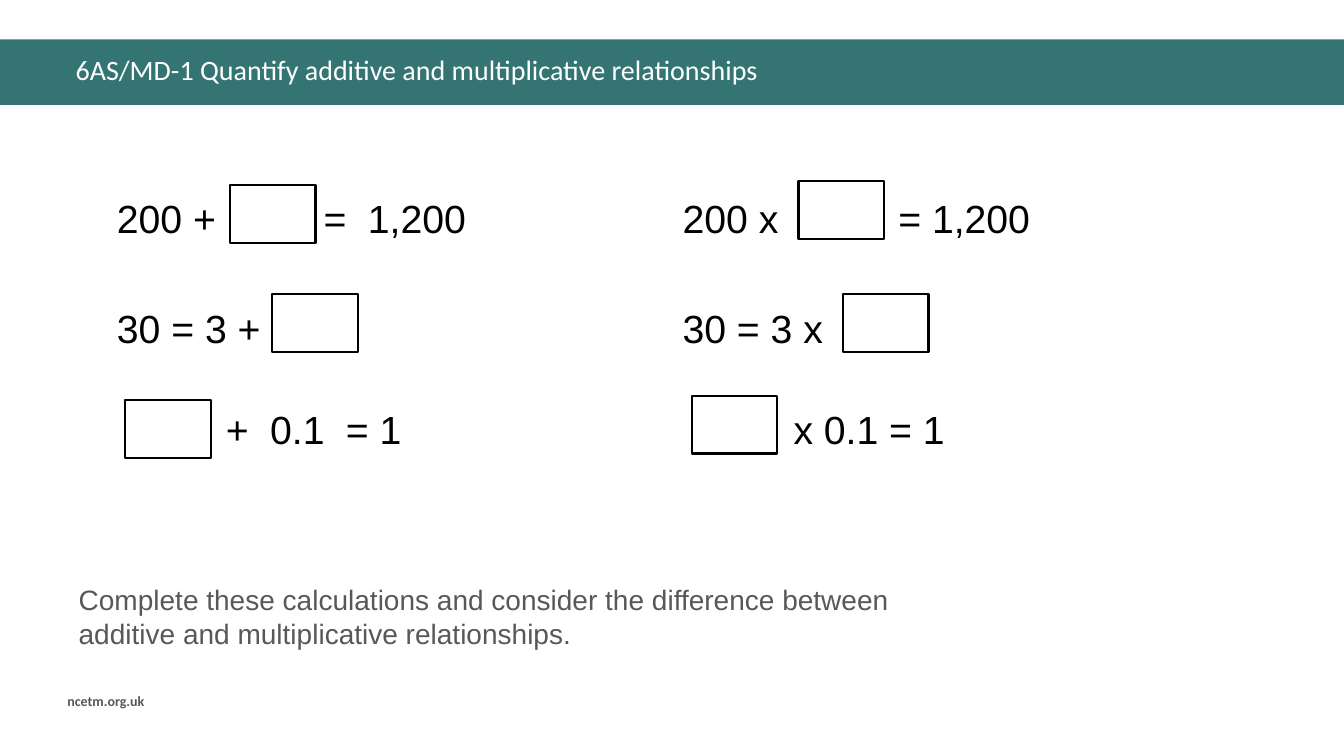
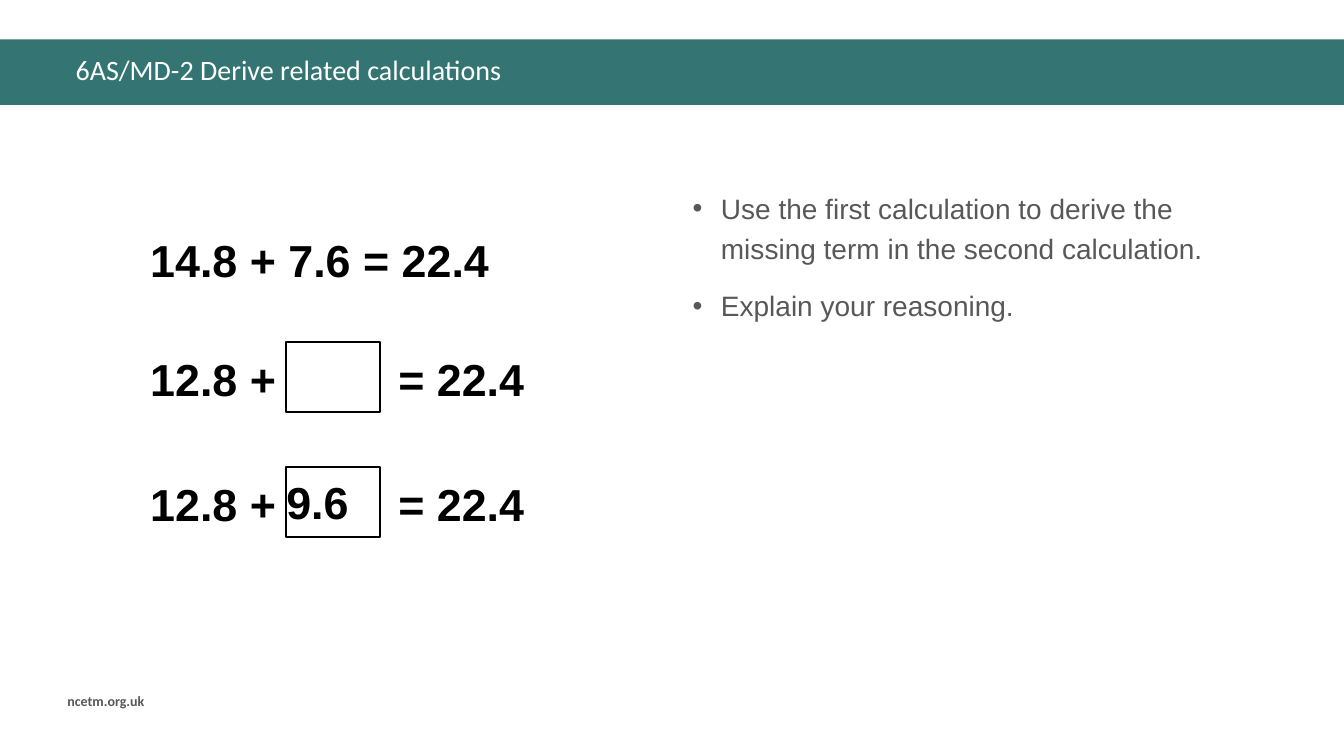
from dataclasses import dataclass

from lxml.etree import SubElement
from pptx import Presentation
from pptx.dml.color import RGBColor
from pptx.enum.shapes import MSO_SHAPE
from pptx.enum.text import MSO_ANCHOR, MSO_AUTO_SIZE, PP_ALIGN
from pptx.oxml.ns import qn
from pptx.presentation import Presentation as Deck
from pptx.slide import Slide, SlideLayout
from pptx.text.text import TextFrame
from pptx.util import Inches, Pt

TEAL = RGBColor(0x34, 0x75, 0x74)
GREY = RGBColor(0x58, 0x58, 0x58)
BLACK = RGBColor(0, 0, 0)
WHITE = RGBColor(0xFF, 0xFF, 0xFF)
SLIDE_WIDTH = 13.33
SLIDE_HEIGHT = 7.5
BULLET_INDENT = 0.28


@dataclass(frozen=True)
class Term:
    text: str
    left: float
    top: float


@dataclass(frozen=True)
class AnswerBox:
    left: float
    top: float
    text: str = ""


@dataclass(frozen=True)
class Sums:
    size: int
    bold: bool
    box_width: float
    box_height: float
    terms: list[Term]
    boxes: list[AnswerBox]


@dataclass(frozen=True)
class Body:
    left: float
    top: float
    width: float
    height: float
    lines: list[str]
    bulleted: bool


@dataclass(frozen=True)
class Lesson:
    title: str
    sums: Sums
    body: Body


ADD_LEFT, MULTIPLY_LEFT, DERIVE_LEFT = 1.16, 6.77, 1.49
FIRST_ROW, SECOND_ROW, THIRD_ROW = 1.93, 3.02, 4.02
KNOWN_ROW, MISSING_ROW, SOLVED_ROW = 2.31, 3.49, 4.73

LESSONS = [
    Lesson(
        "6AS/MD-1 Quantify additive and multiplicative relationships",
        Sums(
            28, False, 0.85, 0.57,
            [
                Term("200 +", ADD_LEFT, FIRST_ROW),
                Term("=", 3.21, FIRST_ROW),
                Term("1,200", 3.65, FIRST_ROW),
                Term("200 x", MULTIPLY_LEFT, FIRST_ROW),
                Term("= 1,200", 8.91, FIRST_ROW),
                Term("30 = 3 +", ADD_LEFT, SECOND_ROW),
                Term("30 = 3 x", MULTIPLY_LEFT, SECOND_ROW),
                Term("+", 2.24, THIRD_ROW),
                Term("0.1", 2.68, THIRD_ROW),
                Term("= 1", 3.43, THIRD_ROW),
                Term("x 0.1 = 1", 7.87, THIRD_ROW),
            ],
            [
                AnswerBox(2.28, 1.84),
                AnswerBox(2.7, 2.92),
                AnswerBox(1.24, 3.97),
                AnswerBox(7.92, 1.8),
                AnswerBox(8.36, 2.92),
                AnswerBox(6.86, 3.93),
            ],
        ),
        Body(
            0.68, 5.73, 8.25, 0.77,
            ["Complete these calculations and consider the difference between "
             "additive and multiplicative relationships."],
            False,
        ),
    ),
    Lesson(
        "6AS/MD-2 Derive related calculations",
        Sums(
            32, True, 0.93, 0.7,
            [
                Term("14.8 + 7.6 = 22.4", DERIVE_LEFT, KNOWN_ROW),
                Term("12.8 +", DERIVE_LEFT, MISSING_ROW),
                Term("= 22.4", 3.95, MISSING_ROW),
                Term("12.8 +", DERIVE_LEFT, SOLVED_ROW),
                Term("= 22.4", 3.95, SOLVED_ROW),
            ],
            [AnswerBox(2.84, 3.39), AnswerBox(2.84, 4.63, "9.6")],
        ),
        Body(
            6.77, 1.78, 5.9, 4.4,
            ["Use the first calculation to derive the missing term in the second calculation.",
             "Explain your reasoning."],
            True,
        ),
    ),
]


def format_runs(frame: TextFrame, name: str, size: int, color: RGBColor, bold: bool = False) -> None:
    for paragraph in frame.paragraphs:
        for run in paragraph.runs:
            run.font.name = name
            run.font.size = Pt(size)
            run.font.bold = bold
            run.font.color.rgb = color


def clear_margins(frame: TextFrame) -> None:
    frame.margin_left = frame.margin_right = 0
    frame.margin_top = frame.margin_bottom = 0


def prepare_layout(presentation: Deck) -> SlideLayout:
    layout = presentation.slide_layouts[1]
    for placeholder in list(layout.placeholders):
        if placeholder.placeholder_format.idx >= 10:
            placeholder.element.getparent().remove(placeholder.element)
    title = layout.placeholders[0]
    title.left, title.top = Inches(0.65), Inches(0.51)
    title.width, title.height = Inches(12.32), Inches(0.47)
    title.text_frame.vertical_anchor = MSO_ANCHOR.TOP
    return layout


def add_band_and_footer(slide: Slide, layout: SlideLayout) -> None:
    band = slide.shapes.add_shape(
        MSO_SHAPE.RECTANGLE, 0, Inches(0.39), Inches(SLIDE_WIDTH), Inches(0.65)
    )
    band.shadow.inherit = False
    band.fill.solid()
    band.fill.fore_color.rgb = TEAL
    band.line.fill.background()
    footer = slide.shapes.add_textbox(Inches(0.57), Inches(6.82), Inches(1.21), Inches(0.27))
    footer.text_frame.word_wrap = True
    footer.text_frame.text = "ncetm.org.uk"
    format_runs(footer.text_frame, "Calibri", 10, GREY, True)
    layout_tree = layout.shapes.element
    layout_tree.insert(2, band.element)
    layout_tree.append(footer.element)


def fill_title(slide: Slide, text: str) -> None:
    frame = slide.shapes.title.text_frame
    frame.text = text
    frame.auto_size = MSO_AUTO_SIZE.NONE
    frame.paragraphs[0].alignment = PP_ALIGN.LEFT
    frame.paragraphs[0].line_spacing = 0.9
    format_runs(frame, "Calibri", 20, WHITE)


def fill_body(slide: Slide, body: Body) -> None:
    placeholder = slide.placeholders[1]
    placeholder.left, placeholder.top = Inches(body.left), Inches(body.top)
    placeholder.width, placeholder.height = Inches(body.width), Inches(body.height)
    frame = placeholder.text_frame
    frame.text = "\n".join(body.lines)
    frame.auto_size = MSO_AUTO_SIZE.NONE
    frame.vertical_anchor = MSO_ANCHOR.TOP
    for index, paragraph in enumerate(frame.paragraphs):
        properties = paragraph._p.get_or_add_pPr()
        indent = Inches(BULLET_INDENT) if body.bulleted else 0
        properties.set("marL", str(indent))
        properties.set("indent", str(-indent))
        if body.bulleted:
            bullet_color = SubElement(properties, qn("a:buClr"))
            SubElement(bullet_color, qn("a:srgbClr")).set("val", str(GREY))
            SubElement(properties, qn("a:buFont")).set("typeface", "Arial")
            SubElement(properties, qn("a:buChar")).set("char", "•")
            paragraph.line_spacing = 1.2
            paragraph.space_after = Pt(6)
        else:
            SubElement(properties, qn("a:buNone"))
        paragraph.space_before = Pt(6 if index else 0)
    format_runs(frame, "Arial", 20, GREY)


def add_sums(slide: Slide, sums: Sums) -> None:
    for term in sums.terms:
        width = len(term.text) * sums.size / 100
        text_box = slide.shapes.add_textbox(
            Inches(term.left), Inches(term.top), Inches(width), Inches(sums.size / 60)
        )
        clear_margins(text_box.text_frame)
        text_box.text_frame.text = term.text
        format_runs(text_box.text_frame, "Arial", sums.size, BLACK, sums.bold)
    for box in sums.boxes:
        shape = slide.shapes.add_shape(
            MSO_SHAPE.RECTANGLE, Inches(box.left), Inches(box.top),
            Inches(sums.box_width), Inches(sums.box_height),
        )
        shape.shadow.inherit = False
        shape.fill.background()
        shape.line.color.rgb = BLACK
        shape.line.width = Pt(1.5)
        if box.text:
            clear_margins(shape.text_frame)
            shape.text_frame.text = box.text
            format_runs(shape.text_frame, "Arial", sums.size, BLACK, sums.bold)


def main() -> None:
    presentation = Presentation()
    presentation.slide_width = Inches(SLIDE_WIDTH)
    presentation.slide_height = Inches(SLIDE_HEIGHT)
    layout = prepare_layout(presentation)
    for index, lesson in enumerate(LESSONS):
        slide = presentation.slides.add_slide(layout)
        if index == 0:
            add_band_and_footer(slide, layout)
        fill_title(slide, lesson.title)
        fill_body(slide, lesson.body)
        add_sums(slide, lesson.sums)
    presentation.save("out.pptx")


if __name__ == "__main__":
    main()
